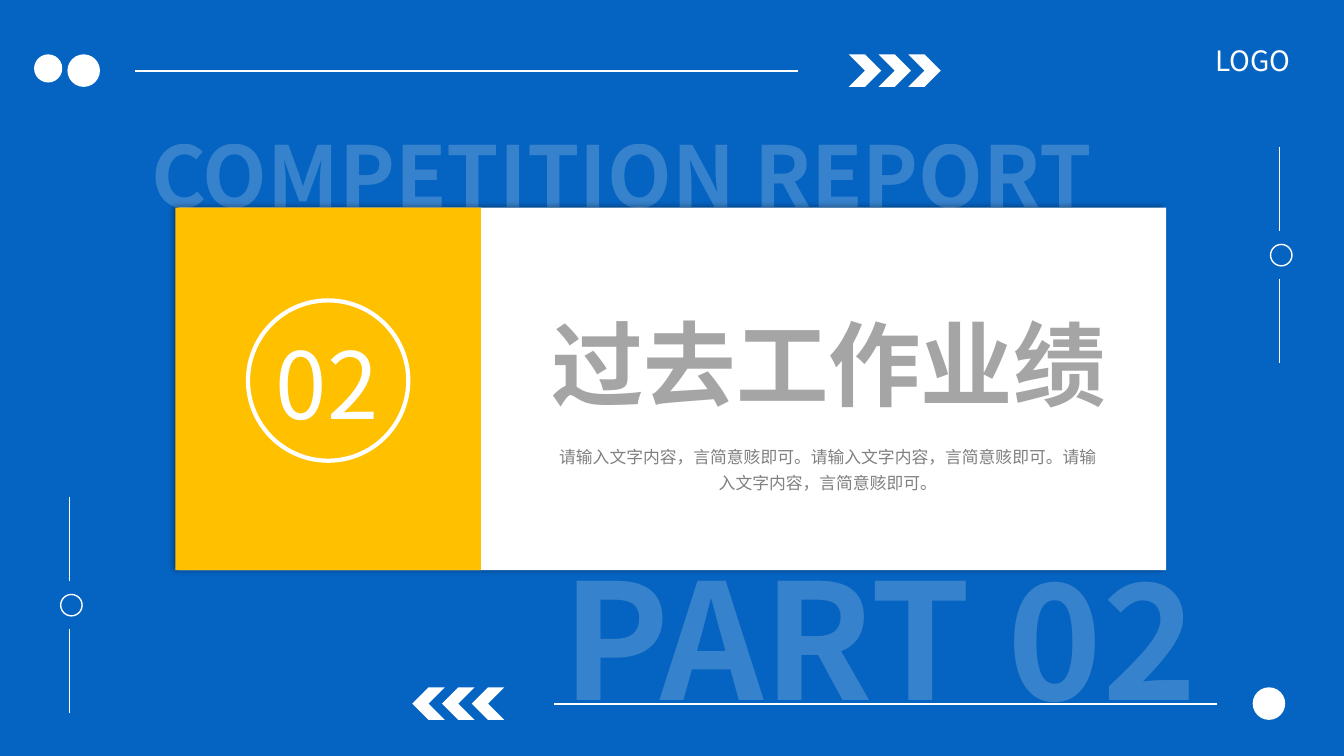
from dataclasses import dataclass

from lxml import etree
from pptx import Presentation
from pptx.dml.color import RGBColor
from pptx.enum.shapes import MSO_CONNECTOR, MSO_SHAPE
from pptx.enum.text import MSO_ANCHOR, MSO_AUTO_SIZE, PP_ALIGN
from pptx.oxml.ns import qn
from pptx.util import Cm, Pt

RECTANGLE, OVAL, CHEVRON = MSO_SHAPE.RECTANGLE, MSO_SHAPE.OVAL, MSO_SHAPE.CHEVRON
STRAIGHT = MSO_CONNECTOR.STRAIGHT
CENTER, JUSTIFY = PP_ALIGN.CENTER, PP_ALIGN.JUSTIFY
TOP = MSO_ANCHOR.TOP
FIXED_SIZE = MSO_AUTO_SIZE.NONE
SECTION_HEADER = 2


@dataclass(frozen=True)
class Theme:
    font: str = "Noto Sans CJK SC"
    blue: str = "0563C1"
    yellow: str = "FFC000"
    white: str = "FFFFFF"
    title_gray: str = "A5A5A5"
    body_gray: str = "808080"
    ghost_alpha: int = 20
    part_size: int = 115
    title_size: int = 66
    banner_size: int = 60
    logo_size: int = 20
    body_size: int = 12


THEME = Theme()


def add_child(parent, tag, **attributes):
    child = etree.SubElement(parent, qn(tag))
    for name, value in attributes.items():
        child.set(name, str(value))
    return child


# Shapes and lines
def add_figure(page, kind, left, top, width, height, fill=None, outline=None):
    figure = page.shapes.add_shape(kind, Cm(left), Cm(top), Cm(width), Cm(height))
    figure.shadow.inherit = False
    if fill:
        figure.fill.solid()
        figure.fill.fore_color.rgb = RGBColor.from_string(fill)
    else:
        figure.fill.background()
    if outline:
        figure.line.color.rgb = RGBColor.from_string(THEME.white)
        figure.line.width = Pt(outline)
    else:
        figure.line.fill.background()
    return figure


def add_line(page, x1, y1, x2, y2, weight):
    line = page.shapes.add_connector(STRAIGHT, Cm(x1), Cm(y1), Cm(x2), Cm(y2))
    line.line.color.rgb = RGBColor.from_string(THEME.white)
    line.line.width = Pt(weight)
    add_child(line.element.spPr, "a:effectLst")


def add_card_shadow(card):
    effects = card.element.spPr.find(qn("a:effectLst"))
    shadow = add_child(effects, "a:outerShdw", blurRad=Pt(4), dist=Pt(3),
                       dir=180 * 60000, algn="r", rotWithShape=0)
    color = add_child(shadow, "a:srgbClr", val="000000")
    add_child(color, "a:alpha", val=40000)


# Text
def write(box, text, size, color, align=CENTER, bold=False, spacing=1.0, alpha=None):
    frame = box.text_frame
    frame.word_wrap = True
    frame.auto_size = FIXED_SIZE
    frame.vertical_anchor = TOP
    para = frame.paragraphs[0]
    para.alignment = align
    para.line_spacing = spacing
    para.space_before = Pt(0)
    span = para.add_run()
    span.text = text
    span.font.name = THEME.font
    span.font.size = Pt(size)
    span.font.bold = bold
    span.font.color.rgb = RGBColor.from_string(color)
    properties = span.font._element
    add_child(properties, "a:ea", typeface=THEME.font)
    if alpha:
        add_child(properties.find(".//" + qn("a:srgbClr")), "a:alpha", val=alpha * 1000)


def add_text(page, left, top, width, height, text, size, **style):
    box = page.shapes.add_textbox(Cm(left), Cm(top), Cm(width), Cm(height))
    write(box, text, size, THEME.white, **style)


def fill_placeholder(holder, left, top, width, height, text, size, color, **style):
    holder.left, holder.top = Cm(left), Cm(top)
    holder.width, holder.height = Cm(width), Cm(height)
    write(holder, text, size, color, **style)
    # Bring the placeholder in front of the card
    holder.element.getparent().append(holder.element)


# Decorations
def add_gauge(page, x, top):
    for offset in (0, 3.32):
        add_line(page, x, top + offset, x, top + offset + 2.12, 0.5)
    add_figure(page, OVAL, x - 0.22, top + 2.46, 0.54, 0.54, outline=1)


def add_rail(page, top, line_start, line_end, dot_left, arrows_left, rotation=0):
    size, step = 0.82, 0.75
    middle = top + size / 2
    add_line(page, line_start, middle, line_end, middle, 1.5)
    add_figure(page, OVAL, dot_left, top, size, size, THEME.white)
    for index in range(3):
        arrow = add_figure(page, CHEVRON, arrows_left + index * step, top,
                           size, size, THEME.white)
        arrow.rotation = rotation


def main():
    deck = Presentation()
    deck.slide_width, deck.slide_height = Cm(33.87), Cm(19.05)
    page = deck.slides.add_slide(deck.slide_layouts[SECTION_HEADER])
    title, body = page.placeholders
    page.background.fill.solid()
    page.background.fill.fore_color.rgb = RGBColor.from_string(THEME.blue)

    # Banner behind the card
    add_text(page, 2.11, 1.73, 27.1, 3.66, "COMPETITION REPORT", THEME.banner_size,
             bold=True, spacing=1.5, alpha=THEME.ghost_alpha)

    # Frame decorations
    add_gauge(page, 1.75, 12.52)
    add_gauge(page, 32.24, 3.7)
    add_rail(page, 1.37, 3.4, 20.12, 1.7, 21.39)
    add_rail(page, 17.32, 30.68, 13.97, 31.57, 10.39, rotation=180)
    add_figure(page, OVAL, 0.86, 1.37, 0.71, 0.71, THEME.white)

    # Card with title and summary
    card = add_figure(page, RECTANGLE, 4.5, 5.23, 24.89, 9.14, THEME.white)
    add_card_shadow(card)
    fill_placeholder(title, 12.98, 7.62, 15.8, 3.07, "过去工作业绩",
                     THEME.title_size, THEME.title_gray, bold=True)
    add_text(page, 12.34, 13.46, 19.66, 5.18, "PART 02", THEME.part_size,
             bold=True, alpha=THEME.ghost_alpha)
    fill_placeholder(body, 13.79, 10.97, 14.15, 1.52,
                     "请输入文字内容，言简意赅即可。请输入文字内容，言简意赅即可。"
                     "请输入文字内容，言简意赅即可。",
                     THEME.body_size, THEME.body_gray, spacing=1.3)
    add_text(page, 30.38, 0.97, 2.74, 1.12, "LOGO", THEME.logo_size, align=JUSTIFY)

    # Section number
    add_figure(page, RECTANGLE, 4.42, 5.23, 7.7, 9.14, THEME.yellow)
    add_figure(page, OVAL, 6.25, 7.57, 4.04, 4.04, outline=3)
    add_text(page, 5.92, 8.13, 4.65, 3.07, "02", THEME.title_size)

    deck.save("out.pptx")


if __name__ == "__main__":
    main()
